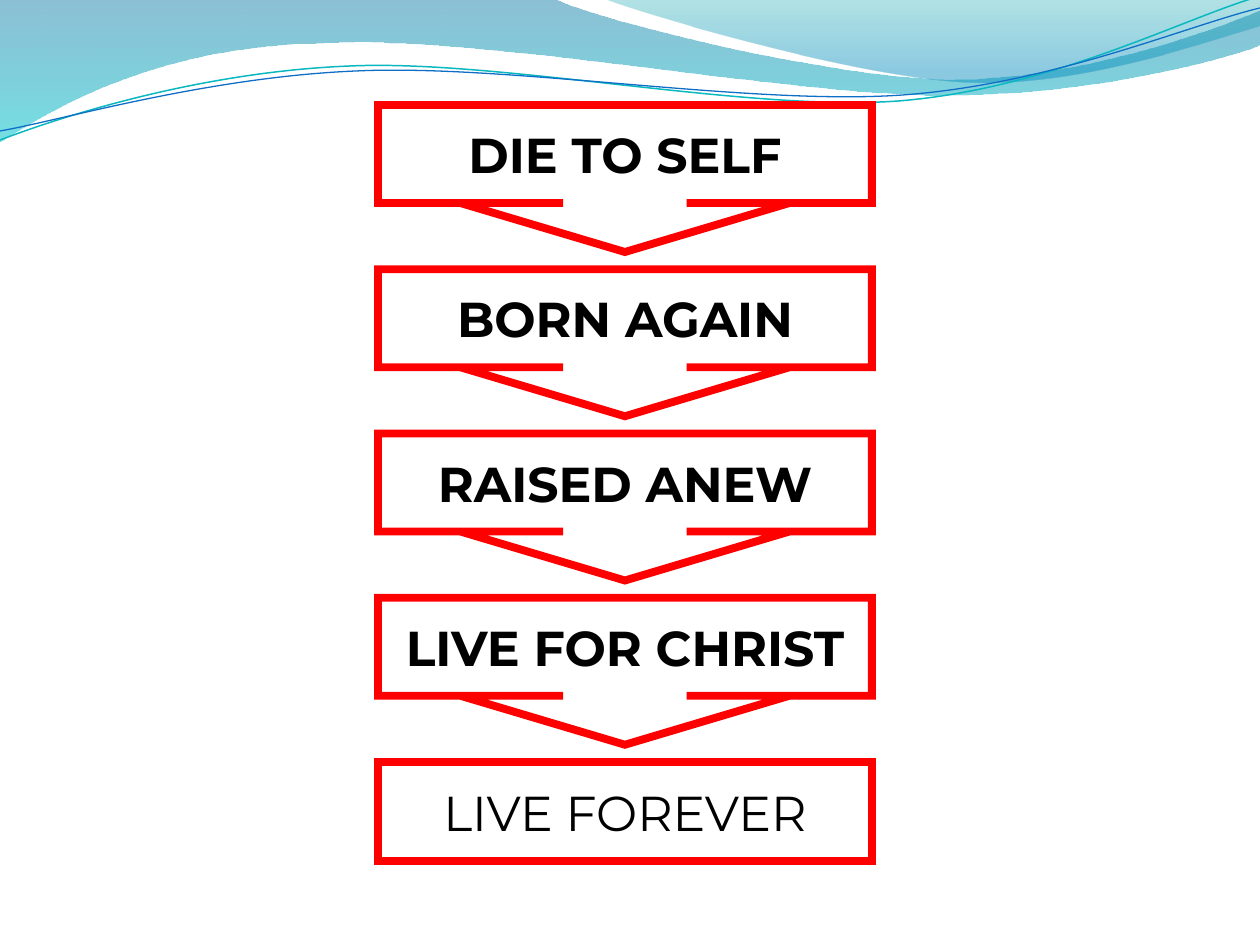
"""Build a slide of five linked steps under a wave header."""
from lxml.etree import SubElement
from pptx import Presentation
from pptx.dml.color import RGBColor
from pptx.enum.shapes import MSO_SHAPE as SHAPE
from pptx.enum.text import MSO_ANCHOR, PP_ALIGN
from pptx.oxml.ns import qn
from pptx.util import Pt

PX = 914400 / 126
BLACK = RGBColor(0x00, 0x00, 0x00)
WHITE = RGBColor(0xFF, 0xFF, 0xFF)
RED = RGBColor(0xFF, 0x00, 0x00)
DEEP_BLUE = RGBColor(0x00, 0x74, 0xA1)
CYAN = RGBColor(0x00, 0xC6, 0xCF)
TEAL = RGBColor(0x00, 0xA1, 0xA9)
SKY = RGBColor(0x00, 0x8B, 0xBF)
LINE_TEAL = RGBColor(0x0A, 0xB8, 0xBF)
LINE_BLUE = RGBColor(0x0F, 0x6F, 0xC6)

STEPS = ["DIE TO SELF", "BORN AGAIN", "RAISED ANEW", "LIVE FOR CHRIST", "LIVE FOREVER"]
LEFT, WIDTH = 378, 494
FIRST_TOP, LAST_TOP = 105, 762
PITCH = (LAST_TOP - FIRST_TOP) / (len(STEPS) - 1)
CALLOUT_H, BOX_H = 147, 99
CALLOUT_ADJ = (0.84, 1.12, 1 / 3, 2 / 3)

WAVES = [
    ([[(0, 0)], [(554, -1)],
      [(600, 21), (837, 79), (955, 79)], [(1075, 79), (1207, 33), (1260, 11)],
      [(1261, 45)],
      [(1239, 55), (1096, 96), (940, 95)], [(784, 95), (481, 35), (324, 43)],
      [(163, 45), (58, 105), (-1, 142)]],
     [(0, DEEP_BLUE, 45), (1, CYAN, 55)]),
    ([[(604, -1)],
      [(641, 14), (859, 78), (969, 82)], [(1079, 87), (1211, 40), (1260, 26)],
      [(1260, 0)]],
     [(0, TEAL, 30), (0.8, SKY, 45)]),
]
RIPPLES = [
    ([[(0, 140)], [(60, 117), (199, 72), (349, 66)],
      [(498, 59), (747, 112), (898, 101)], [(1050, 89), (1182, 19), (1257, -3)]],
     LINE_TEAL, 0.85),
    ([[(0, 131)], [(59, 121), (207, 77), (357, 71)],
      [(508, 64), (752, 106), (903, 95)], [(1053, 84), (1186, 26), (1260, 8)]],
     LINE_BLUE, 0.75),
]


def px(n):
    return round(n * PX)


def add_outline(shapes, segments, close):
    start, *points = [(px(x), px(y)) for seg in segments for x, y in seg]
    builder = shapes.build_freeform(*start)
    builder.add_line_segments(points, close=close)
    sp = builder.convert_to_shape()
    sp.shadow.inherit = False
    lines = iter(list(sp._element.iter(qn("a:lnTo"))))
    for seg in segments[1:]:
        group = [next(lines) for _ in seg]
        if len(group) == 3:
            curve = SubElement(group[0].getparent(), qn("a:cubicBezTo"))
            group[0].addprevious(curve)
            for line in group:
                curve.append(line[0])
                line.getparent().remove(line)
    return sp


def add_wave(shapes, segments, stops):
    sp = add_outline(shapes, segments, True)
    sp.line.fill.background()
    sp.fill.gradient()
    sp.fill.gradient_angle = 270
    for stop, (position, color, _) in zip(sp.fill.gradient_stops, stops):
        stop.position = position
        stop.color.rgb = color
    for clr, (_, _, opacity) in zip(sp._element.spPr.iter(qn("a:srgbClr")), stops):
        SubElement(clr, qn("a:alpha")).set("val", str(opacity * 1000))


def add_ripple(shapes, segments, color, width):
    sp = add_outline(shapes, segments, False)
    sp.fill.background()
    sp.line.color.rgb = color
    sp.line.width = Pt(width)


def add_step(shapes, index, text):
    last = index == len(STEPS) - 1
    kind, height = (SHAPE.RECTANGLE, BOX_H) if last else (SHAPE.DOWN_ARROW_CALLOUT, CALLOUT_H)
    sp = shapes.add_shape(kind, px(LEFT), px(FIRST_TOP + index * PITCH), px(WIDTH), px(height))
    if not last:
        for i, value in enumerate(CALLOUT_ADJ):
            sp.adjustments[i] = value
    sp.shadow.inherit = False
    sp.fill.solid()
    sp.fill.fore_color.rgb = WHITE
    sp.line.color.rgb = RED
    sp.line.width = Pt(4.5)
    ln = sp._element.spPr.find(qn("a:ln"))
    SubElement(ln, qn("a:miter")).set("lim", "800000")
    tf = sp.text_frame
    tf.text = text
    tf.word_wrap = False
    tf.vertical_anchor = MSO_ANCHOR.MIDDLE
    p = tf.paragraphs[0]
    p.alignment = PP_ALIGN.CENTER
    font = p.runs[0].font
    font.name = "Montserrat"
    font.size = Pt(28)
    font.bold = not last
    font.color.rgb = BLACK


def main():
    prs = Presentation()
    prs.slide_width, prs.slide_height = px(1260), px(945)
    shapes = prs.slides.add_slide(prs.slide_layouts[6]).shapes
    for wave in WAVES:
        add_wave(shapes, *wave)
    for ripple in RIPPLES:
        add_ripple(shapes, *ripple)
    for index, text in enumerate(STEPS):
        add_step(shapes, index, text)
    prs.save("out.pptx")


if __name__ == "__main__":
    main()
